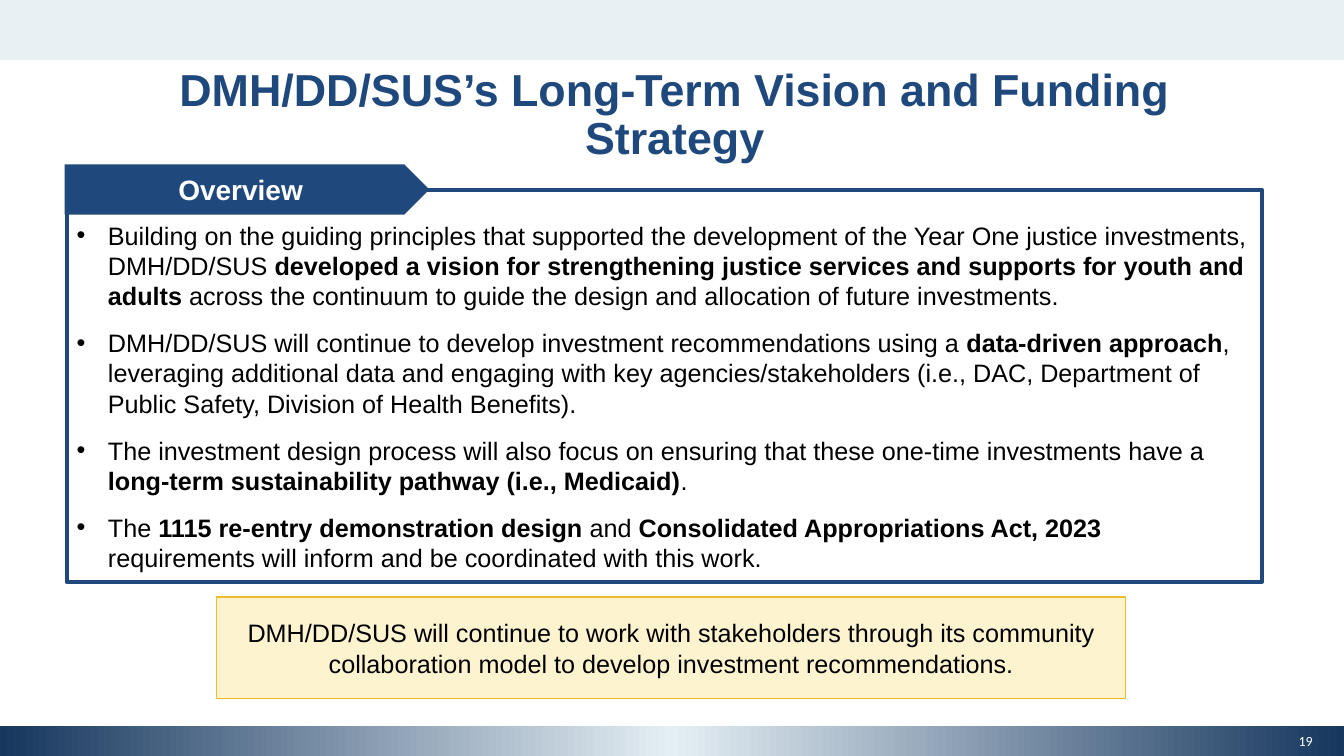
from copy import deepcopy

from lxml import etree
from pptx import Presentation
from pptx.dml.color import RGBColor
from pptx.enum.shapes import MSO_SHAPE
from pptx.enum.text import MSO_ANCHOR, MSO_AUTO_SIZE, PP_ALIGN
from pptx.oxml.ns import qn
from pptx.util import Cm, Pt

RECT, PENTAGON = MSO_SHAPE.RECTANGLE, MSO_SHAPE.PENTAGON
TOP, MIDDLE = MSO_ANCHOR.TOP, MSO_ANCHOR.MIDDLE
LEFT, CENTER = PP_ALIGN.LEFT, PP_ALIGN.CENTER
NO_AUTOFIT = MSO_AUTO_SIZE.NONE

NAVY, WHITE, BLACK = "1F497D", "FFFFFF", "000000"
TITLE = "DMH/DD/SUS’s Long-Term Vision and Funding Strategy"
TAB = "Overview"
NOTE = ("DMH/DD/SUS will continue to work with stakeholders through its community "
        "collaboration model to develop investment recommendations.")
PAGE_NUMBER = "19"
# Each bullet is a list of spans, alternating regular and bold.
BULLETS = [
    ["Building on the guiding principles that supported the development of the "
     "Year One justice investments, DMH/DD/SUS ",
     "developed a vision for strengthening justice services and supports for "
     "youth and adults ",
     "across the continuum to guide the design and allocation of future investments."],
    ["DMH/DD/SUS will continue to develop investment recommendations using a ",
     "data-driven approach",
     ", leveraging additional data and engaging with key agencies/stakeholders "
     "(i.e., DAC, Department of Public Safety, Division of Health Benefits)."],
    ["The investment design process will also focus on ensuring that these "
     "one-time investments have a ",
     "long-term sustainability pathway (i.e., Medicaid)",
     "."],
    ["The ",
     "1115 re-entry demonstration design ",
     "and ",
     "Consolidated Appropriations Act, 2023 ",
     "requirements will inform and be coordinated with this work."],
]
FOOTER_STOPS = [(0, "17375E"), (0.5, "E4EEF4"), (1, "17375E")]

WIDTH, HEIGHT = 33.87, 19.05
HEADER_HEIGHT, FOOTER_HEIGHT = 1.52, 0.76
BULLET_INDENT = Cm(0.79)


def color(hex_code):
    return RGBColor.from_string(hex_code)


def place(shape, left, top, width, height):
    shape.left, shape.top = Cm(left), Cm(top)
    shape.width, shape.height = Cm(width), Cm(height)


def paint(shape, fill, line=None, weight=0):
    shape.fill.solid()
    shape.fill.fore_color.rgb = color(fill)
    if line:
        shape.line.color.rgb = color(line)
        shape.line.width = Pt(weight)
    else:
        shape.line.fill.background()


def add_box(page, kind, area, fill, line=None, weight=0):
    box = page.shapes.add_shape(kind, *map(Cm, area))
    box.shadow.inherit = False
    paint(box, fill, line, weight)
    return box


def set_frame(shape, anchor, left=0.25, top=0.13, bottom=0.13):
    """Fix wrapping, anchor and insets; the right inset equals the left."""
    frame = shape.text_frame
    frame.auto_size = NO_AUTOFIT
    frame.word_wrap = True
    frame.vertical_anchor = anchor
    frame.margin_left = frame.margin_right = Cm(left)
    frame.margin_top, frame.margin_bottom = Cm(top), Cm(bottom)
    return frame


def style(para, size, hex_code, bold=False, name="Arial", align=CENTER):
    para.alignment = align
    font = para.font
    font.name, font.size, font.bold = name, Pt(size), bold
    font.color.rgb = color(hex_code)


def write(shape, text, size, hex_code, bold=False, name="Arial"):
    para = shape.text_frame.paragraphs[0]
    para.text = text
    style(para, size, hex_code, bold, name)
    return para


def add_gradient(shape, stops):
    shape.fill.gradient()
    shape.fill.gradient_angle = 0
    stop_list = shape._element.spPr.find(qn("a:gradFill")).find(qn("a:gsLst"))
    while len(stop_list) < len(stops):
        stop_list.append(deepcopy(stop_list[0]))
    for stop, (position, hex_code) in zip(shape.fill.gradient_stops, stops):
        stop.position = position
        stop.color.rgb = color(hex_code)


def add_bullet(para):
    properties = para._p.get_or_add_pPr()
    properties.set("marL", str(BULLET_INDENT))
    properties.set("indent", str(-BULLET_INDENT))
    etree.SubElement(properties, qn("a:buFont"), typeface="Arial")
    etree.SubElement(properties, qn("a:buChar"), char="•")


def fill_list(frame):
    for index, spans in enumerate(BULLETS):
        para = frame.paragraphs[0] if index == 0 else frame.add_paragraph()
        para.space_before = Pt(12)
        add_bullet(para)
        style(para, 18, BLACK, align=LEFT)
        for number, text in enumerate(spans):
            span = para.add_run()
            span.text = text
            if number % 2:
                span.font.bold = True


def main():
    deck = Presentation()
    deck.slide_width, deck.slide_height = Cm(WIDTH), Cm(HEIGHT)
    page = deck.slides.add_slide(deck.slide_layouts[1])
    title, body = page.placeholders

    place(title, 3.43, 1.57, 27.15, 1.52)
    set_frame(title, TOP)
    write(title, TITLE, 32, NAVY, bold=True).line_spacing = 0.9

    place(body, 1.68, 4.78, 30.12, 9.88)
    paint(body, WHITE, NAVY, 3)
    fill_list(set_frame(body, TOP, top=0.76, bottom=0.25))

    add_box(page, RECT, (0, 0, WIDTH, HEADER_HEIGHT), "E9F0F3")
    footer_top = HEIGHT - FOOTER_HEIGHT
    footer = add_box(page, RECT, (0, footer_top, WIDTH, FOOTER_HEIGHT), NAVY)
    add_gradient(footer, FOOTER_STOPS)

    tab = add_box(page, PENTAGON, (1.63, 4.14, 9.19, 1.27), NAVY)
    set_frame(tab, MIDDLE, top=0.25, bottom=0.25)
    write(tab, TAB, 20, WHITE, bold=True)

    note = add_box(page, RECT, (5.46, 15.04, 22.91, 2.57), "FDF3CF", "EFBB2F", 1)
    set_frame(note, MIDDLE)
    write(note, NOTE, 18, BLACK)

    number = page.shapes.add_textbox(Cm(32.56), Cm(18.44), Cm(0.69), Cm(0.48))
    set_frame(number, MIDDLE, left=0, top=0.03, bottom=0.03)
    write(number, PAGE_NUMBER, 10, WHITE, name="Calibri").space_after = Pt(6)

    deck.save("out.pptx")


if __name__ == "__main__":
    main()
